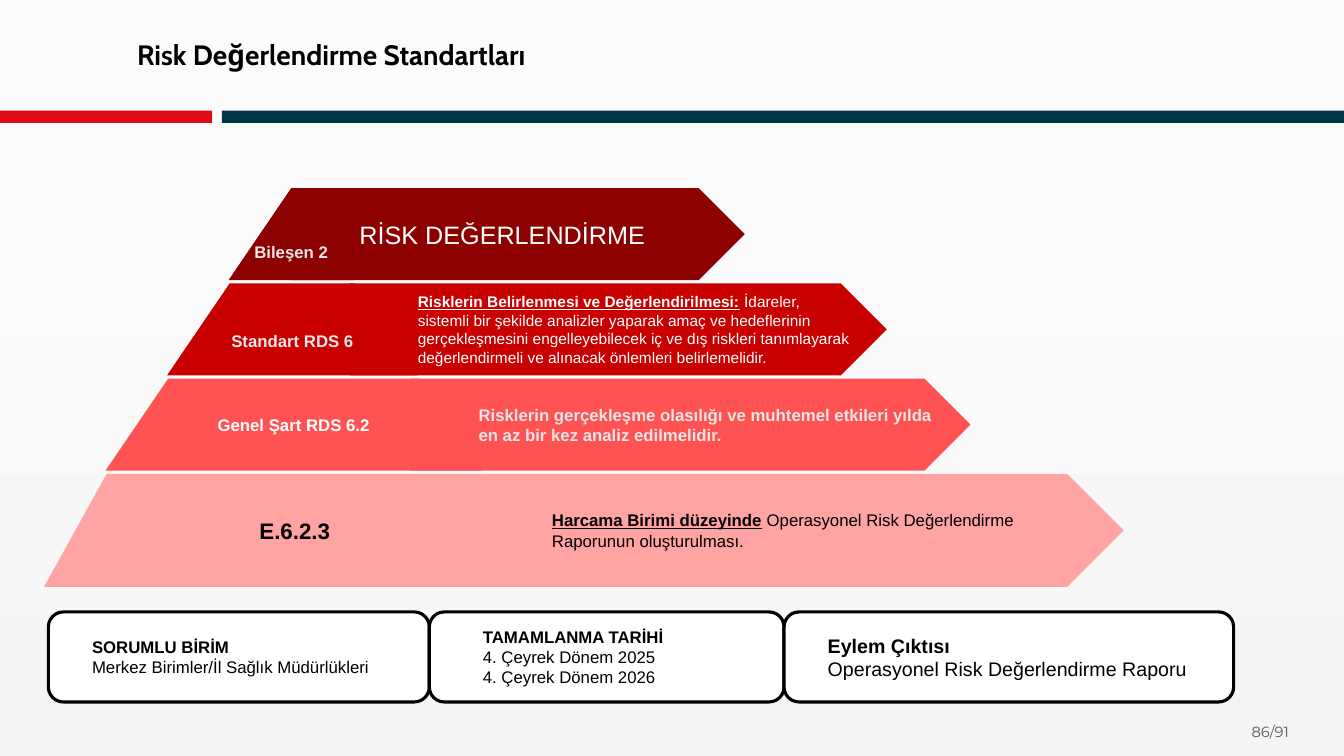
"""Build the risk assessment standards slide with its stepped pyramid."""
from copy import deepcopy

from pptx import Presentation
from pptx.dml.color import RGBColor
from pptx.enum.shapes import MSO_SHAPE
from pptx.enum.text import MSO_ANCHOR, PP_ALIGN
from pptx.oxml.ns import qn
from pptx.util import Cm, Pt

RECTANGLE = MSO_SHAPE.RECTANGLE
ROUNDED = MSO_SHAPE.ROUNDED_RECTANGLE
ARROW = MSO_SHAPE.PENTAGON
LEFT, CENTER = PP_ALIGN.LEFT, PP_ALIGN.CENTER
TOP, MIDDLE = MSO_ANCHOR.TOP, MSO_ANCHOR.MIDDLE


def paint(shape, fill, outline=None):
    shape.shadow.inherit = False
    shape.fill.solid()
    shape.fill.fore_color.rgb = RGBColor.from_string(fill)
    if outline:
        shape.line.color.rgb = RGBColor.from_string(outline)
        shape.line.width = Pt(2.25)
    else:
        shape.line.fill.background()


def write(shape, paragraphs, size, color, font="Arial", align=LEFT, anchor=MIDDLE, indent=0):
    frame = shape.text_frame
    frame.word_wrap = True
    frame.vertical_anchor = anchor
    for index, pieces in enumerate(paragraphs):
        paragraph = frame.add_paragraph() if index else frame.paragraphs[0]
        paragraph.alignment = align
        if indent:
            properties = paragraph._p.get_or_add_pPr()
            properties.set("marL", str(Cm(indent)))
            properties.set("indent", "0")
        for text, style in pieces:
            run = paragraph.add_run()
            run.text = text
            run.font.name = font
            run.font.size = Pt(size)
            run.font.color.rgb = RGBColor.from_string(color)
            run.font.bold = "b" in style
            run.font.underline = "u" in style


deck = Presentation()
deck.slide_width, deck.slide_height = Cm(33.87), Cm(19.05)
slide = deck.slides.add_slide(deck.slide_layouts[5])
shapes = slide.shapes

backdrop = slide.background.fill
backdrop.gradient()
backdrop.gradient_angle = 270
first_stop = slide.element.find(".//" + qn("a:gs"))
first_stop.addnext(deepcopy(first_stop))
BACKDROP_STOPS = [(0, "FBFBFB"), (0.44, "FAFAFA"), (1, "F4F4F4")]
for stop, (position, tint) in zip(backdrop.gradient_stops, BACKDROP_STOPS):
    stop.position = position
    stop.color.rgb = RGBColor.from_string(tint)

for band_left, band_width, band_color in [(0, 5.35, "DC0C15"), (5.59, 28.28, "003546")]:
    band = shapes.add_shape(RECTANGLE, Cm(band_left), Cm(2.79), Cm(band_width), Cm(0.31))
    paint(band, band_color)

title = shapes.title
title.left, title.top, title.width, title.height = Cm(3.2), Cm(0.91), Cm(11.2), Cm(1.32)
write(title, [[("Risk Değerlendirme Standartları", "b")]], 20, "000000", "Cabin", anchor=TOP)
title.text_frame.paragraphs[0].line_spacing = 0.9

page_number = shapes.add_textbox(Cm(31.29), Cm(18.08), Cm(2.29), Cm(1.02))
write(page_number, [[("86/91", "")]], 10.5, "595959", "Montserrat", anchor=TOP)

LEVEL_TOP, LEVEL_PITCH, SLOPE = 4.74, 2.4, 1.58
LEVELS = [
    dict(fill="8C0000", height=2.32, left=7.34, width=11.43,
         label="Bileşen 2", label_size=12, label_color="E7E6E6", drop=0.91, margin=0.05,
         detail=[("RİSK DEĞERLENDİRME", "")], size=18, color="FFFFFF"),
    dict(fill="C80000", height=2.32, left=8.81, width=13.54,
         label="Standart RDS 6", label_size=12, label_color="E7E6E6", drop=0.6, margin=1.37,
         detail=[("Risklerin Belirlenmesi ve Değerlendirilmesi:", "bu"),
                 (" İdareler, sistemli bir şekilde analizler yaparak amaç ve hedeflerinin "
                  "gerçekleşmesini engelleyebilecek iç ve dış riskleri tanımlayarak "
                  "değerlendirmeli ve alınacak önlemleri belirlemelidir.", "")],
         size=11, color="FFFFFF"),
    dict(fill="FF5353", height=2.32, left=10.34, width=14.12,
         label="Genel Şart RDS 6.2", label_size=12, label_color="FFFFFF", drop=0, margin=2,
         detail=[("Risklerin gerçekleşme olasılığı ve muhtemel etkileri yılda en az bir kez "
                  "analiz edilmelidir.", "b")],
         size=12, color="E7E6E6"),
    dict(fill="FFA3A3", height=2.85, left=12.19, width=16.13,
         label="E.6.2.3", label_size=16, label_color="000000", drop=0, margin=2.67,
         detail=[("Harcama Birimi düzeyinde", "bu"),
                 (" Operasyonel Risk Değerlendirme Raporunun oluşturulması.", "")],
         size=12, color="000000"),
]
for step, level in enumerate(LEVELS):
    top = LEVEL_TOP + step * LEVEL_PITCH
    bottom = top + level["height"]
    detail = shapes.add_shape(ARROW, Cm(level["left"]), Cm(top),
                              Cm(level["width"]), Cm(level["height"]))
    paint(detail, level["fill"])
    write(detail, [level["detail"]], level["size"], level["color"], indent=1.47)

    middle = 7.34 + 0.03 * step
    upper, lower = SLOPE * step, SLOPE * (step + 1)
    outline = shapes.build_freeform(Cm(middle - lower), Cm(bottom))
    outline.add_line_segments([(Cm(middle - upper), Cm(top)), (Cm(middle + upper), Cm(top)),
                               (Cm(middle + lower), Cm(bottom))])
    tier = outline.convert_to_shape()
    paint(tier, level["fill"])
    write(tier, [[(level["label"], "b")]], level["label_size"], level["label_color"],
          align=CENTER)
    tier_frame = tier.text_frame
    tier_frame.margin_left = tier_frame.margin_right = Cm(level["margin"])
    tier_frame.margin_top, tier_frame.margin_bottom = Cm(0.05 + level["drop"]), Cm(0.05)

CARDS = [
    (9.6, 0.74, 12, "SORUMLU BİRİM", ["Merkez Birimler/İl Sağlık Müdürlükleri"]),
    (8.94, 0.99, 12, "TAMAMLANMA TARİHİ", ["4. Çeyrek Dönem 2025", "4. Çeyrek Dönem 2026"]),
    (11.33, 0.74, 14, "Eylem Çıktısı", ["Operasyonel Risk Değerlendirme Raporu"]),
]
card_left = 1.22
for card_width, indent, size, heading, entries in CARDS:
    card = shapes.add_shape(ROUNDED, Cm(card_left), Cm(15.42), Cm(card_width), Cm(2.27))
    paint(card, "FFFFFF", "000000")
    write(card, [[(heading, "b")]] + [[(entry, "")] for entry in entries], size, "000000",
          indent=indent)
    card_left += card_width

deck.save("out.pptx")
